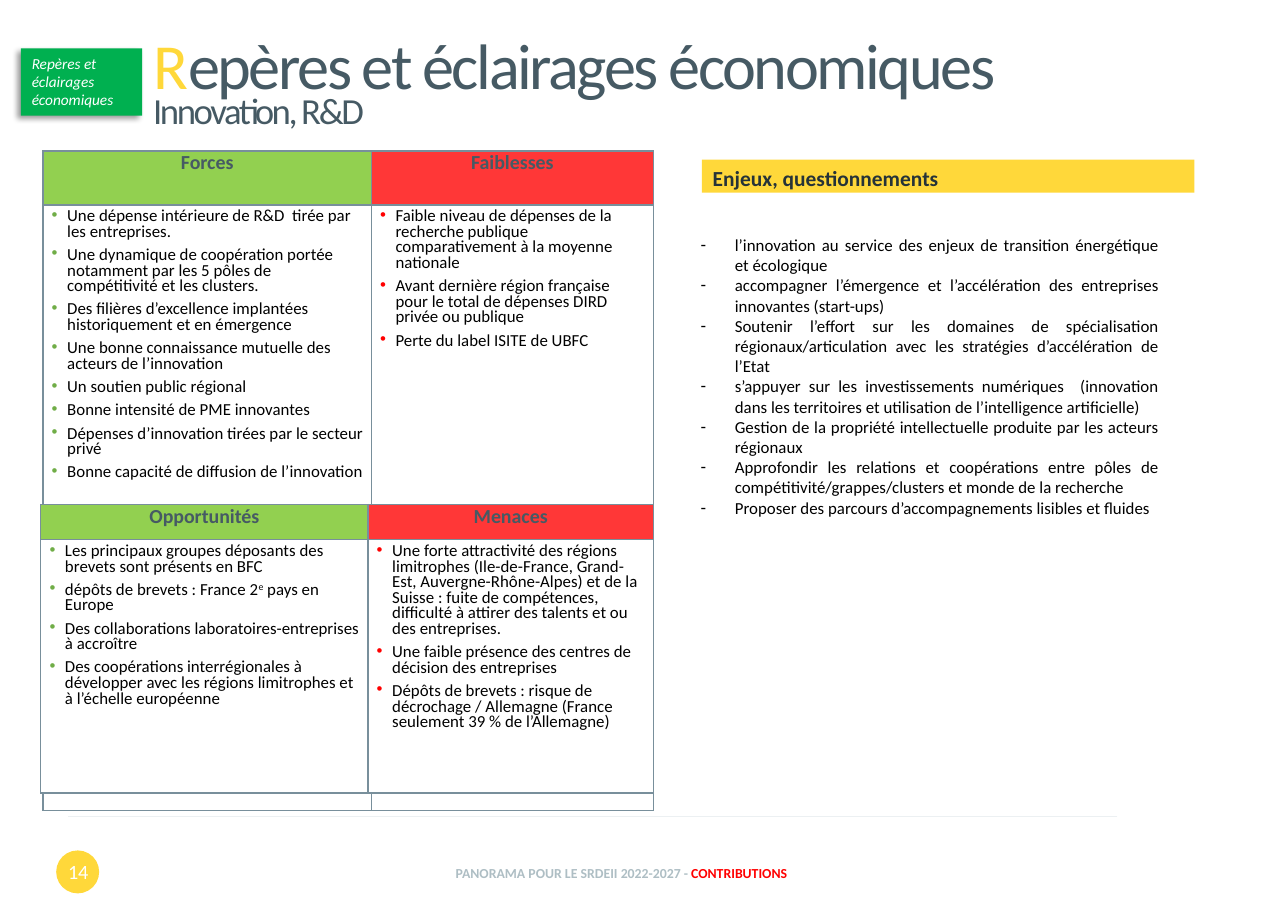
from dataclasses import dataclass

import lxml.etree
import pptx
import pptx.dml.color
import pptx.enum.shapes
import pptx.enum.text
import pptx.oxml
import pptx.oxml.ns
import pptx.util

Inches = pptx.util.Inches
Pt = pptx.util.Pt
Align = pptx.enum.text.PP_ALIGN
Anchor = pptx.enum.text.MSO_ANCHOR
Shape = pptx.enum.shapes.MSO_SHAPE
qn = pptx.oxml.ns.qn


@dataclass(frozen=True)
class Theme:
    font: str = "Calibri"
    yellow: str = "FFD83A"
    slate: str = "465A64"
    dark: str = "263338"
    green: str = "00B050"
    light_green: str = "92D050"
    green_bullet: str = "70AD47"
    light_red: str = "FF3737"
    red: str = "FF0000"
    white: str = "FFFFFF"
    black: str = "000000"
    footer_grey: str = "AEBEC4"
    rule_grey: str = "ECF0F2"
    border: str = "788F9B"
    title_size: float = 42
    subtitle_size: float = 24
    banner_size: float = 14
    number_size: float = 13.2
    heading_size: float = 13
    body_size: float = 11
    tag_size: float = 10
    footer_size: float = 9


def rgb(value):
    return pptx.dml.color.RGBColor.from_string(value)


def add_element(parent, tag, **attributes):
    element = lxml.etree.SubElement(parent, qn(tag))
    for name, value in attributes.items():
        element.set(name, str(value))
    return element


class SlideBuilder:
    def __init__(self, slide, theme):
        self.slide = slide
        self.theme = theme

    def run(self, paragraph, text, size, color, bold=False, italic=False, tracking=None, raised=False):
        run = paragraph.add_run()
        run.text = text
        font = run.font
        font.name, font.size = self.theme.font, Pt(size)
        font.bold, font.italic = bold, italic
        font.color.rgb = rgb(color)
        properties = run._r.get_or_add_rPr()
        if tracking:
            properties.set("spc", str(round(tracking * 100)))
        if raised:
            properties.set("baseline", "30000")

    def bullet(self, paragraph, character, left, hanging, color=None):
        properties = paragraph._p.get_or_add_pPr()
        properties.set("marL", str(Inches(left)))
        properties.set("indent", str(-Inches(hanging)))
        if color:
            add_element(add_element(properties, "a:buClr"), "a:srgbClr", val=color)
        add_element(properties, "a:buFont", typeface="Arial")
        add_element(properties, "a:buChar", char=character)

    def place(self, shape, left, top, width, height, anchor):
        shape.left, shape.top = Inches(left), Inches(top)
        shape.width, shape.height = Inches(width), Inches(height)
        frame = shape.text_frame
        frame.word_wrap = True
        frame.auto_size = pptx.enum.text.MSO_AUTO_SIZE.NONE
        frame.vertical_anchor = anchor
        return frame

    def title(self, box, lines):
        frame = self.place(self.slide.shapes.title, *box, Anchor.BOTTOM)
        for index, runs in enumerate(lines):
            paragraph = frame.add_paragraph() if index else frame.paragraphs[0]
            paragraph.alignment = Align.LEFT
            paragraph.line_spacing = 0.7
            for text, size, color in runs:
                self.run(paragraph, text, size, color, tracking=-1.6)

    def body_list(self, box, items):
        frame = self.place(self.slide.placeholders[1], *box, Anchor.TOP)
        for index, item in enumerate(items):
            paragraph = frame.add_paragraph() if index else frame.paragraphs[0]
            paragraph.alignment = Align.JUSTIFY
            paragraph.space_before = Pt(0)
            self.bullet(paragraph, "-", 0.31, 0.31)
            self.run(paragraph, item, self.theme.body_size, self.theme.black)

    def text(self, box, runs):
        frame = self.place(self.slide.shapes.add_textbox(0, 0, 0, 0), *box, Anchor.MIDDLE)
        paragraph = frame.paragraphs[0]
        paragraph.alignment = Align.CENTER
        for text, size, color, bold in runs:
            self.run(paragraph, text, size, color, bold)

    def block(self, kind, box, fill, text="", size=None, color=None, align=Align.LEFT, **style):
        shape = self.slide.shapes.add_shape(kind, 0, 0, 0, 0)
        frame = self.place(shape, *box, Anchor.TOP)
        shape.shadow.inherit = False
        shape.fill.solid()
        shape.fill.fore_color.rgb = rgb(fill)
        shape.line.fill.background()
        if text:
            frame.paragraphs[0].alignment = align
            self.run(frame.paragraphs[0], text, size, color, **style)
        return shape

    def drop_shadow(self, shape):
        effects = shape._element.spPr.find(qn("a:effectLst"))
        shadow = add_element(effects, "a:outerShdw", blurRad=Pt(4), dist=Pt(3),
                             dir=135 * 60000, algn="tr", rotWithShape=0)
        color = add_element(shadow, "a:srgbClr", val=self.theme.black)
        add_element(color, "a:alpha", val=40000)

    def rule(self, left, right, y):
        line = self.slide.shapes.add_connector(pptx.enum.shapes.MSO_CONNECTOR.STRAIGHT,
                                               Inches(left), Inches(y), Inches(right), Inches(y))
        line.line.color.rgb = rgb(self.theme.rule_grey)
        line.line.width = Pt(0.5)
        add_element(line._element.spPr, "a:effectLst")

    def cell(self, cell, fill, top_inset):
        cell.margin_left = cell.margin_right = Inches(0.07)
        cell.margin_top, cell.margin_bottom = Inches(top_inset), 0
        properties = cell._tc.get_or_add_tcPr()
        for side in ("a:lnL", "a:lnR", "a:lnT", "a:lnB"):
            line = add_element(properties, side, w=Pt(1))
            add_element(add_element(line, "a:solidFill"), "a:srgbClr", val=self.theme.border)
        cell.fill.solid()
        cell.fill.fore_color.rgb = rgb(fill)
        return cell.text_frame

    def swot_table(self, left, top, widths, heights, columns):
        """Draw a green and a red column, each a heading above a bulleted list."""
        theme = self.theme
        table = self.slide.shapes.add_table(2, 2, Inches(left), Inches(top),
                                            Inches(sum(widths)), Inches(sum(heights))).table
        table.first_row = table.horz_banding = False
        for row, height in zip(table.rows, heights):
            row.height = Inches(height)
        colors = ((theme.light_green, theme.green_bullet), (theme.light_red, theme.red))
        for index, (heading, items) in enumerate(columns):
            table.columns[index].width = Inches(widths[index])
            fill, bullet_color = colors[index]
            paragraph = self.cell(table.cell(0, index), fill, 0).paragraphs[0]
            paragraph.alignment = Align.CENTER
            self.run(paragraph, heading, theme.heading_size, theme.slate, bold=True)
            frame = self.cell(table.cell(1, index), theme.white, 0.04)
            for number, item in enumerate(items):
                paragraph = frame.add_paragraph() if number else frame.paragraphs[0]
                paragraph.line_spacing = 0.75
                paragraph.space_before = Pt(2 if number else 0)
                paragraph.space_after = Pt(3)
                self.bullet(paragraph, "•", 0.15, 0.14, bullet_color)
                # Every second part of a split item is superscript.
                for part, text in enumerate(item.split("^")):
                    self.run(paragraph, text, theme.body_size, theme.black, raised=part % 2 == 1)


FORCES = ("Forces", [
    "Une dépense intérieure de R&D  tirée par les entreprises.",
    "Une dynamique de coopération portée notamment par les 5 pôles de compétitivité et les clusters.",
    "Des filières d’excellence implantées historiquement et en émergence",
    "Une bonne connaissance mutuelle des acteurs de l’innovation",
    "Un soutien public régional",
    "Bonne intensité de PME innovantes",
    "Dépenses d’innovation tirées par le secteur privé",
    "Bonne capacité de diffusion de l’innovation"])
FAIBLESSES = ("Faiblesses", [
    "Faible niveau de dépenses de la recherche publique  comparativement à la moyenne nationale",
    "Avant dernière région française pour le total de dépenses DIRD privée ou publique",
    "Perte du label ISITE de UBFC"])
OPPORTUNITES = ("Opportunités", [
    "Les principaux groupes déposants des brevets sont présents en BFC",
    "dépôts de brevets : France 2^e^ pays en Europe",
    "Des collaborations laboratoires-entreprises à accroître",
    "Des coopérations interrégionales à développer avec les régions limitrophes et à l’échelle européenne"])
MENACES = ("Menaces", [
    "Une forte attractivité des régions limitrophes (Ile-de-France, Grand-Est, Auvergne-Rhône-Alpes) et de la "
    "Suisse : fuite de compétences, difficulté à attirer des talents et ou des entreprises.",
    "Une faible présence des centres de décision des entreprises",
    "Dépôts de brevets : risque de décrochage / Allemagne (France seulement 39 % de l’Allemagne)"])
ENJEUX = [
    "l’innovation au service des enjeux de transition énergétique et écologique",
    "accompagner l’émergence et l’accélération des entreprises innovantes (start-ups)",
    "Soutenir l’effort sur les domaines de spécialisation régionaux/articulation avec les stratégies "
    "d’accélération de l’Etat",
    "s’appuyer sur les investissements numériques  (innovation dans les territoires et utilisation de "
    "l’intelligence artificielle)",
    "Gestion de la propriété intellectuelle produite par les acteurs régionaux",
    "Approfondir les relations et coopérations entre pôles de compétitivité/grappes/clusters et monde de la recherche",
    "Proposer des parcours d’accompagnements lisibles et fluides"]


def main():
    presentation = pptx.Presentation()
    presentation.slide_width, presentation.slide_height = Inches(11.69), Inches(8.27)
    theme = Theme()
    builder = SlideBuilder(presentation.slides.add_slide(presentation.slide_layouts[1]), theme)

    builder.rule(10.14, 0.62, 7.41)
    builder.block(Shape.OVAL, (0.51, 7.72, 0.39, 0.39), theme.yellow)
    builder.text((0.45, 7.69, 0.52, 0.44), [("14", theme.number_size, theme.white, False)])
    builder.text((1.12, 7.71, 9.04, 0.44), [
        ("PANORAMA POUR LE SRDEII 2022-2027 - ", theme.footer_size, theme.footer_grey, True),
        ("CONTRIBUTIONS", theme.footer_size, theme.red, True)])

    builder.title((1.29, 0.12, 9.94, 1.12), [
        [("R", theme.title_size, theme.yellow),
         ("epères et éclairages économiques", theme.title_size, theme.slate)],
        [("Innovation, R&D", theme.subtitle_size, theme.slate)]])
    tag = builder.block(Shape.RECTANGLE, (0.19, 0.44, 1.1, 0.61), theme.green,
                        "Repères et éclairages économiques", theme.tag_size, theme.white, italic=True)
    builder.drop_shadow(tag)

    builder.block(Shape.RECTANGLE, (6.37, 1.45, 4.47, 0.3), theme.yellow, "Enjeux, questionnements",
                  theme.banner_size, theme.dark, Align.JUSTIFY, bold=True)
    builder.body_list((6.26, 2.08, 4.36, 2.69), ENJEUX)
    builder.swot_table(0.39, 1.37, (2.98, 2.56), (0.49, 5.5), (FORCES, FAIBLESSES))
    builder.swot_table(0.37, 4.58, (2.97, 2.59), (0.32, 2.3), (OPPORTUNITES, MENACES))
    presentation.save("out.pptx")


if __name__ == "__main__":
    main()
